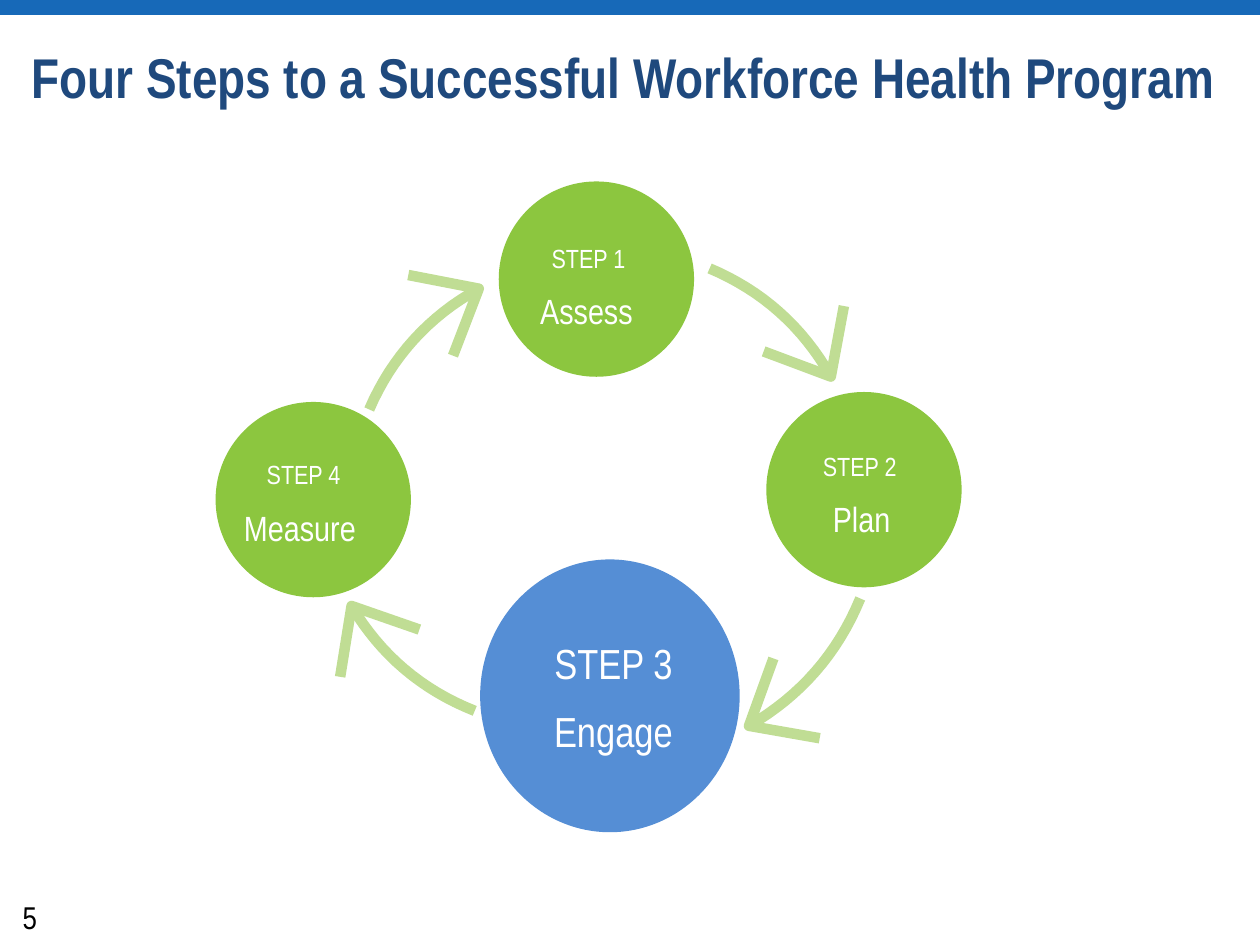
from math import cos, hypot, radians, sin

from lxml.etree import SubElement
from pptx import Presentation
from pptx.dml.color import RGBColor
from pptx.enum.shapes import MSO_SHAPE
from pptx.enum.text import MSO_ANCHOR as Anchor, MSO_AUTO_SIZE as AutoSize, PP_ALIGN as Align
from pptx.oxml.ns import qn
from pptx.util import Pt

BAR_BLUE = RGBColor(0x17, 0x69, 0xB8)
TITLE_BLUE = RGBColor(0x1F, 0x49, 0x7D)
STEP_GREEN = RGBColor(0x8C, 0xC6, 0x3F)
STEP_BLUE = RGBColor(0x55, 0x8E, 0xD5)
ARROW_GREEN = RGBColor(0xC0, 0xDD, 0x94)
WHITE = RGBColor(0xFF, 0xFF, 0xFF)
BLACK = RGBColor(0, 0, 0)

FONT = "Arial Narrow"
TITLE_LAYOUT = 5
BULGE = 0.085       # rise of an arrow's arc, as a share of its chord
BARB_LENGTH = 41
BARB_ANGLE = 40
ARC_PARTS = 16

GREEN_STYLE = dict(fill=STEP_GREEN, align=Align.LEFT, label_size=15, label_width=51.8,
                   label_height=18, name_size=20, name_height=23.8, pitch=27.4)
BLUE_STYLE = dict(fill=STEP_BLUE, align=Align.CENTER, label_size=24, label_width=68.4,
                  label_height=28.8, name_size=24, name_height=28.8, pitch=38.9)

# box, label, name, name width, shift of the text from the axis, top of the label, style
STEPS = [
    ((285, 103.7, 111.6, 111.6), "STEP 1", "Assess", 64.8, 0.3, 34.6, GREEN_STYLE),
    ((437.9, 224, 111.6, 111.6), "STEP 2", "Plan", 40.3, 2.4, 33.1, GREEN_STYLE),
    ((274.4, 319.7, 148.3, 155.9), "STEP 3", "Engage", 69.1, 2, 44.6, BLUE_STYLE),
    ((123.2, 229.7, 111.6, 111.6), "STEP 4", "Measure", 77.8, -0.7, 32.4, GREEN_STYLE),
]
ARROWS = [
    ((405.5, 153.4), (474.8, 215.2)),
    ((491.6, 342), (428, 414.8)),
    ((271.3, 406.2), (200.9, 346.3)),
    ((211, 234), (273.6, 165)),
]


def in_points(*lengths):
    return [Pt(length) for length in lengths]


def style_text(frame, text, size, color, align=Align.LEFT, bold=False):
    para = frame.paragraphs[0]
    para.alignment = align
    span = para.add_run()
    span.text = text
    span.font.color.rgb = color
    for name, value in dict(name=FONT, size=Pt(size), bold=bold).items():
        setattr(span.font, name, value)


def add_solid(page, kind, box, color):
    shape = page.shapes.add_shape(kind, *in_points(*box))
    shape.shadow.inherit = False
    shape.fill.solid()
    shape.fill.fore_color.rgb = color
    shape.line.fill.background()


def add_title(page, text, box):
    title = page.shapes.title
    for name, value in zip(("left", "top", "width", "height"), in_points(*box)):
        setattr(title, name, value)
    frame = title.text_frame
    for name, value in dict(vertical_anchor=Anchor.BOTTOM, word_wrap=True,
                            auto_size=AutoSize.NONE).items():
        setattr(frame, name, value)
    style_text(frame, text, 32, TITLE_BLUE, bold=True)
    frame.paragraphs[0].line_spacing = 0.9


def add_label(page, text, box, size, align):
    frame = page.shapes.add_textbox(*in_points(*box)).text_frame
    for name, value in dict(margin_left=0, margin_top=0, margin_right=0, margin_bottom=0,
                            word_wrap=False, auto_size=AutoSize.SHAPE_TO_FIT_TEXT).items():
        setattr(frame, name, value)
    style_text(frame, text, size, WHITE, align)


def add_step(page, box, label, name, name_width, shift, label_top, style):
    left, top, width, _ = box
    add_solid(page, MSO_SHAPE.OVAL, box, style["fill"])
    axis = left + width / 2 + shift
    lines = [(label, style["label_width"], style["label_height"], style["label_size"]),
             (name, name_width, style["name_height"], style["name_size"])]
    for row, (text, text_width, text_height, size) in enumerate(lines):
        text_box = (axis - text_width / 2, top + label_top + row * style["pitch"],
                    text_width, text_height)
        add_label(page, text, text_box, size, style["align"])


def add_open_line(page, points):
    start, *rest = [in_points(*point) for point in points]
    builder = page.shapes.build_freeform(*start)
    builder.add_line_segments(rest, close=False)
    shape = builder.convert_to_shape()
    shape.shadow.inherit = False
    shape.fill.background()
    shape.line.color.rgb = ARROW_GREEN
    shape.line.width = Pt(6)
    SubElement(shape.line._get_or_add_ln(), qn("a:round"))


def add_arrow(page, start, end):
    """Draw an arc that bulges away from the cycle's centre, with an open head."""
    (x, y), (tip_x, tip_y) = start, end
    dx, dy = tip_x - x, tip_y - y
    arc = []
    for part in range(ARC_PARTS + 1):
        share = part / ARC_PARTS
        rise = 4 * share * (1 - share) * BULGE
        arc.append((x + share * dx + rise * dy, y + share * dy - rise * dx))

    back_x, back_y = 4 * BULGE * dy - dx, -4 * BULGE * dx - dy
    scale = BARB_LENGTH / hypot(back_x, back_y)
    barbs = []
    for angle in (radians(-BARB_ANGLE), radians(BARB_ANGLE)):
        barbs.append((tip_x + scale * (back_x * cos(angle) - back_y * sin(angle)),
                      tip_y + scale * (back_x * sin(angle) + back_y * cos(angle))))
    add_open_line(page, [barbs[0], end, barbs[1]])
    add_open_line(page, arc)


def add_page_number(page, number, box):
    frame = page.shapes.add_textbox(*in_points(*box)).text_frame
    frame.word_wrap = True
    style_text(frame, number, 18, BLACK)


def main():
    deck = Presentation()
    deck.slide_width, deck.slide_height = in_points(720, 540)
    page = deck.slides.add_slide(deck.slide_layouts[TITLE_LAYOUT])
    add_solid(page, MSO_SHAPE.RECTANGLE, (0, 0, 720, 8.6), BAR_BLUE)
    add_title(page, "Four Steps to a Successful Workforce Health Program",
              (10.8, 24.5, 693.4, 42.5))
    for start, end in ARROWS:
        add_arrow(page, start, end)
    for step in STEPS:
        add_step(page, *step)
    add_page_number(page, "5", (5.8, 509.8, 36.7, 18))
    deck.save("out.pptx")


if __name__ == "__main__":
    main()
